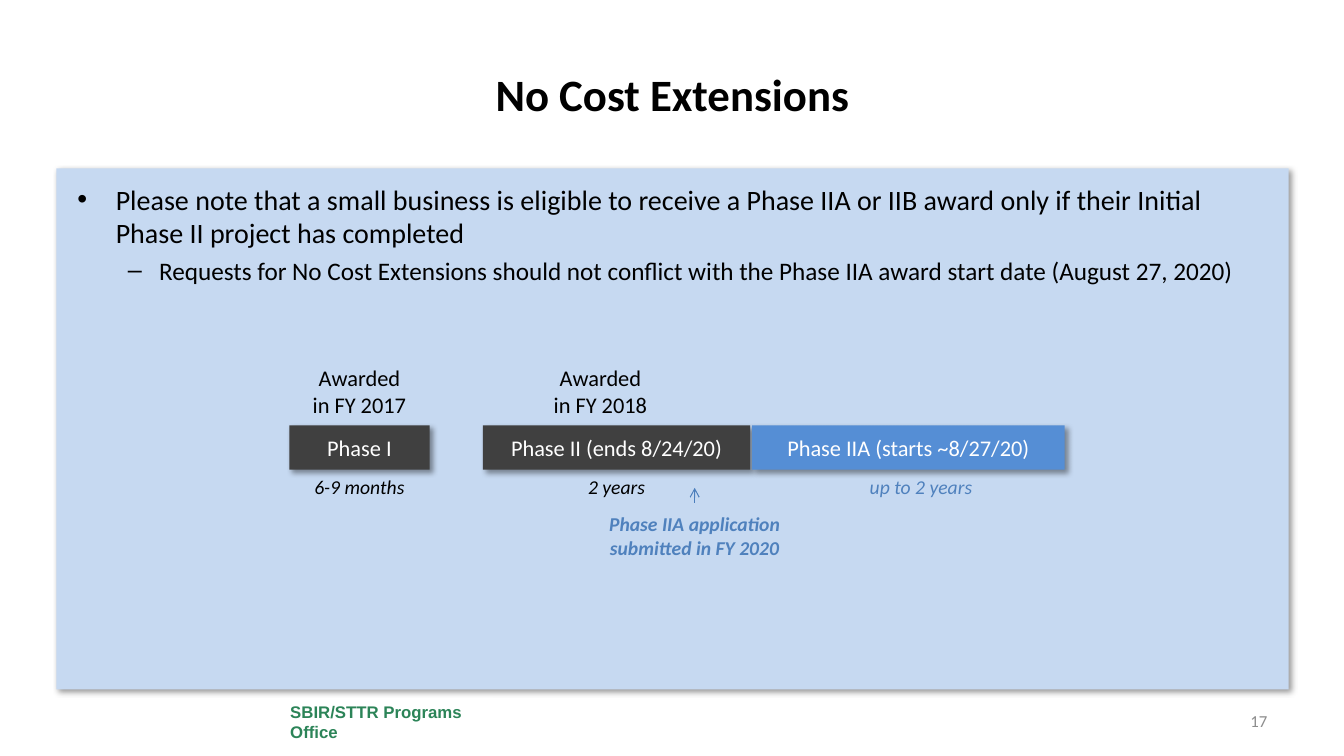
from dataclasses import dataclass

from lxml.etree import SubElement
from pptx import Presentation
from pptx.dml.color import RGBColor
from pptx.enum.shapes import MSO_CONNECTOR, MSO_SHAPE
from pptx.enum.text import MSO_ANCHOR, MSO_AUTO_SIZE, PP_ALIGN
from pptx.oxml.ns import qn
from pptx.shapes.autoshape import Shape
from pptx.slide import Slide
from pptx.text.text import TextFrame, _Paragraph
from pptx.util import Inches, Pt

BLACK = RGBColor(0x00, 0x00, 0x00)
WHITE = RGBColor(0xFF, 0xFF, 0xFF)
PALE = RGBColor(0xC6, 0xD9, 0xF1)
DARK = RGBColor(0x40, 0x40, 0x40)
BLUE = RGBColor(0x55, 0x8E, 0xD5)
ACCENT = RGBColor(0x4F, 0x81, 0xBD)
ARROW = RGBColor(0x4B, 0x7E, 0xBC)
GREEN = RGBColor(0x2C, 0x84, 0x58)
GRAY = RGBColor(0x8C, 0x8C, 0x8C)


@dataclass
class Box:
    left: float
    top: float
    width: float
    height: float


@dataclass
class Style:
    size: int
    color: RGBColor = BLACK
    bold: bool = False
    italic: bool = False
    align: PP_ALIGN = PP_ALIGN.CENTER
    name: str = "Calibri"


@dataclass
class Phase:
    text: str
    left: float
    width: float
    fill: RGBColor


@dataclass
class Label:
    text: str
    box: Box
    style: Style


@dataclass
class Bullet:
    text: str
    mark: str
    level: int
    indent: float
    hang: float
    size: int
    before: int


def place(shape: Shape, box: Box) -> None:
    shape.left, shape.top = Inches(box.left), Inches(box.top)
    shape.width, shape.height = Inches(box.width), Inches(box.height)


def paint(para: _Paragraph, style: Style) -> None:
    para.alignment = style.align
    for run in para.runs:
        font = run.font
        font.name, font.size = style.name, Pt(style.size)
        font.bold, font.italic = style.bold, style.italic
        font.color.rgb = style.color


def write(frame: TextFrame, text: str, style: Style, anchor: MSO_ANCHOR) -> None:
    frame.word_wrap = True
    frame.auto_size = MSO_AUTO_SIZE.NONE
    frame.vertical_anchor = anchor
    frame.text = text
    paint(frame.paragraphs[0], style)


def add_text(slide: Slide, label: Label, anchor: MSO_ANCHOR = MSO_ANCHOR.TOP) -> None:
    shape = slide.shapes.add_textbox(0, 0, 0, 0)
    place(shape, label.box)
    write(shape.text_frame, label.text, label.style, anchor)


def add_rect(slide: Slide, box: Box, fill: RGBColor, shade: bool = True) -> Shape:
    shape = slide.shapes.add_shape(MSO_SHAPE.RECTANGLE, 0, 0, 0, 0)
    place(shape, box)
    shape.fill.solid()
    shape.fill.fore_color.rgb = fill
    shape.line.fill.background()
    shape.shadow.inherit = False
    if shade:
        effects = shape._element.spPr.find(qn("a:effectLst"))
        outer = SubElement(effects, qn("a:outerShdw"), blurRad=str(Pt(4)),
                           dist=str(Pt(3)), dir="2700000", algn="tl", rotWithShape="0")
        color = SubElement(outer, qn("a:srgbClr"), val="000000")
        SubElement(color, qn("a:alpha"), val="40000")
    return shape


def add_list(slide: Slide, box: Box, items: list[Bullet]) -> None:
    shape = slide.shapes.add_textbox(0, 0, 0, 0)
    place(shape, box)
    frame = shape.text_frame
    frame.word_wrap = True
    for i, item in enumerate(items):
        para = frame.add_paragraph() if i else frame.paragraphs[0]
        para.text = item.text
        para.level = item.level
        if item.before:
            para.space_before = Pt(item.before)
        props = para._p.get_or_add_pPr()
        props.set("marL", str(Inches(item.indent)))
        props.set("indent", str(-Inches(item.hang)))
        SubElement(props, qn("a:buFont"), typeface="Arial")
        SubElement(props, qn("a:buChar"), char=item.mark)
        paint(para, Style(item.size, align=PP_ALIGN.LEFT))


def add_arrow(slide: Slide, x: float, start: float, end: float) -> None:
    line = slide.shapes.add_connector(MSO_CONNECTOR.STRAIGHT, Inches(x), Inches(start),
                                      Inches(x), Inches(end))
    line.line.color.rgb = ARROW
    line.line.width = Pt(0.75)
    SubElement(line.line._get_or_add_ln(), qn("a:tailEnd"), type="arrow")
    SubElement(line._element.spPr, qn("a:effectLst"))


BULLETS = [
    Bullet("Please note that a small business is eligible to receive a Phase IIA or IIB "
           "award only if their Initial Phase II project has completed",
           "•", 0, 0.38, 0.38, 20, 0),
    Bullet("Requests for No Cost Extensions should not conflict with the Phase IIA award "
           "start date (August 27, 2020)", "–", 1, 0.81, 0.31, 18, 4),
]
PHASES = [
    Phase("Phase I", 2.87, 1.39, DARK),
    Phase("Phase II (ends 8/24/20)", 4.79, 2.65, DARK),
    Phase("Phase IIA (starts ~8/27/20)", 7.46, 3.1, BLUE),
]
SPAN = Style(14, italic=True)
LABELS = [
    Label("6-9 months", Box(2.91, 4.66, 1.31, 0.34), SPAN),
    Label("2 years", Box(5.46, 4.66, 1.31, 0.34), SPAN),
    Label("up to 2 years", Box(8.48, 4.66, 1.31, 0.34), Style(14, ACCENT, italic=True)),
    Label("Phase IIA application submitted in FY 2020", Box(5.78, 5.03, 2.22, 0.57),
          Style(14, ACCENT, bold=True, italic=True)),
    Label("Awarded in FY 2017", Box(2.98, 3.56, 1.17, 0.64), Style(16)),
    Label("Awarded in FY 2018", Box(5.37, 3.56, 1.17, 0.64), Style(16)),
]


def main() -> None:
    deck = Presentation()
    deck.slide_width, deck.slide_height = Inches(13.33), Inches(7.5)
    slide = deck.slides.add_slide(deck.slide_layouts[5])

    # Panel and footer
    add_rect(slide, Box(0.56, 1.67, 12.22, 5.17), PALE)
    foot = add_rect(slide, Box(2.78, 6.92, 2.11, 0.48), WHITE, shade=False)
    write(foot.text_frame, "SBIR/STTR Programs Office",
          Style(12, GREEN, bold=True, align=PP_ALIGN.LEFT, name="Arial"), MSO_ANCHOR.MIDDLE)
    add_text(slide, Label("17", Box(10.56, 6.95, 2.11, 0.4),
                          Style(12, GRAY, align=PP_ALIGN.RIGHT)), MSO_ANCHOR.MIDDLE)

    # Title and bullets
    title = slide.shapes.title
    place(title, Box(0.67, 0.3, 12, 1.25))
    write(title.text_frame, "No Cost Extensions", Style(32, bold=True), MSO_ANCHOR.MIDDLE)
    add_list(slide, Box(0.67, 1.76, 12, 4.53), BULLETS)

    # Timeline
    for phase in PHASES:
        bar = add_rect(slide, Box(phase.left, 4.22, phase.width, 0.44), phase.fill)
        write(bar.text_frame, phase.text, Style(16, WHITE), MSO_ANCHOR.MIDDLE)
    for label in LABELS:
        add_text(slide, label)
    add_arrow(slide, 6.89, 4.99, 4.84)

    deck.save("out.pptx")


if __name__ == "__main__":
    main()
